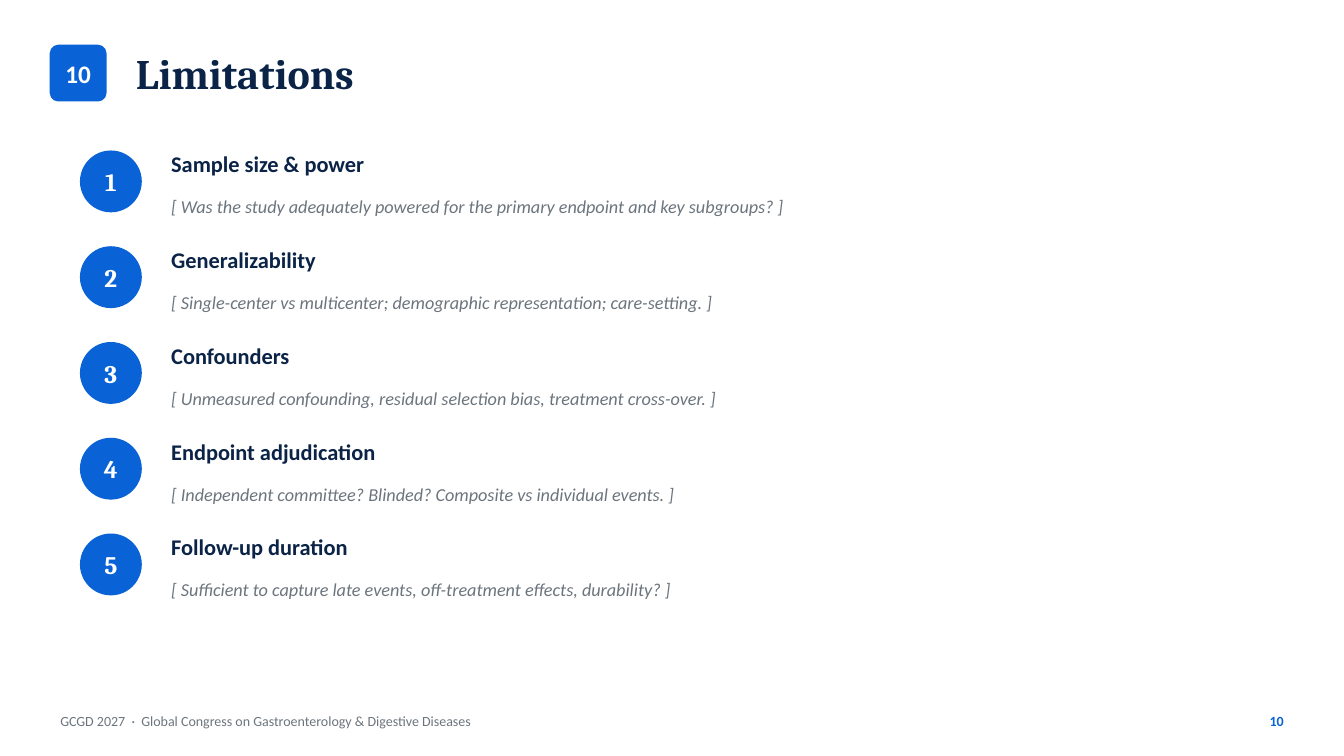
from dataclasses import dataclass

from pptx import Presentation
from pptx import util as u
from pptx.dml.color import RGBColor
from pptx.enum import shapes, text

BLUE = RGBColor(0x0A, 0x63, 0xD6)
NAVY = RGBColor(0x0B, 0x23, 0x46)
GREY = RGBColor(0x6C, 0x75, 0x7D)
WHITE = RGBColor(0xFF, 0xFF, 0xFF)

SANS = "Calibri"
SERIF = "Cambria"

GRID = 0.05
SLIDE_COLS = 266.6
SLIDE_ROWS = 150
FIRST_ROW = 30
ROW_STEP = 19


@dataclass(frozen=True)
class Area:
    col: float
    row: float
    cols: float
    rows: float

    def lengths(self) -> list[int]:
        return [cells(n) for n in (self.col, self.row, self.cols, self.rows)]


@dataclass(frozen=True)
class Limitation:
    heading: str
    prompt: str


LIMITATIONS = [
    Limitation(
        "Sample size & power",
        "[ Was the study adequately powered for the primary endpoint and key subgroups? ]",
    ),
    Limitation(
        "Generalizability",
        "[ Single-center vs multicenter; demographic representation; care-setting. ]",
    ),
    Limitation(
        "Confounders",
        "[ Unmeasured confounding, residual selection bias, treatment cross-over. ]",
    ),
    Limitation(
        "Endpoint adjudication",
        "[ Independent committee? Blinded? Composite vs individual events. ]",
    ),
    Limitation(
        "Follow-up duration",
        "[ Sufficient to capture late events, off-treatment effects, durability? ]",
    ),
]


def cells(count: float) -> int:
    return u.Inches(count * GRID)


def write(frame, words: str, *, size: float, color: RGBColor, face: str = SANS,
          bold: bool = False, italic: bool = False,
          align=text.PP_ALIGN.LEFT) -> None:
    frame.word_wrap = True
    frame.vertical_anchor = text.MSO_ANCHOR.MIDDLE
    paragraph = frame.paragraphs[0]
    paragraph.alignment = align
    run = paragraph.add_run()
    run.text = words
    run.font.name = face
    run.font.size = u.Pt(size)
    run.font.bold = bold
    run.font.italic = italic
    run.font.color.rgb = color


def add_label(slide, area: Area, words: str, **style) -> None:
    label = slide.shapes.add_textbox(*area.lengths())
    write(label.text_frame, words, **style)


def add_badge(slide, outline, area: Area, number: str, face: str):
    badge = slide.shapes.add_shape(outline, *area.lengths())
    badge.shadow.inherit = False
    badge.fill.solid()
    badge.fill.fore_color.rgb = BLUE
    badge.line.color.rgb = BLUE
    badge.line.width = u.Pt(1)
    frame = badge.text_frame
    frame.margin_left = frame.margin_right = 0
    frame.margin_top = frame.margin_bottom = 0
    write(frame, number, size=18, color=WHITE, face=face, bold=True,
          align=text.PP_ALIGN.CENTER)
    return badge


def add_header(slide) -> None:
    section = add_badge(slide, shapes.MSO_SHAPE.ROUNDED_RECTANGLE,
                        Area(10, 9, 11, 11), "10", SANS)
    section.adjustments[0] = 0.145
    add_label(slide, Area(25, 9, 230, 11), "Limitations",
              size=30, color=NAVY, face=SERIF, bold=True)


def add_limitation(slide, index: int, limitation: Limitation) -> None:
    row = FIRST_ROW + index * ROW_STEP
    add_badge(slide, shapes.MSO_SHAPE.OVAL, Area(16, row, 12, 12),
              str(index + 1), SERIF)
    add_label(slide, Area(32, row - 1, 220, 7), limitation.heading,
              size=16, color=NAVY, bold=True)
    add_label(slide, Area(32, row + 6, 220, 10), limitation.prompt,
              size=13, color=GREY, italic=True)


def add_footer(slide) -> None:
    add_label(slide, Area(10, 140, 180, 6),
              "GCGD 2027  ·  Global Congress on Gastroenterology & Digestive Diseases",
              size=10, color=GREY)
    add_label(slide, Area(SLIDE_COLS - 20, 140, 10, 6), "10",
              size=10, color=BLUE, bold=True, align=text.PP_ALIGN.RIGHT)


def main() -> None:
    deck = Presentation()
    deck.slide_width = cells(SLIDE_COLS)
    deck.slide_height = cells(SLIDE_ROWS)
    slide = deck.slides.add_slide(deck.slide_layouts[6])
    slide.background.fill.solid()
    slide.background.fill.fore_color.rgb = WHITE
    add_header(slide)
    for index, limitation in enumerate(LIMITATIONS):
        add_limitation(slide, index, limitation)
    add_footer(slide)
    deck.save("out.pptx")


if __name__ == "__main__":
    main()
